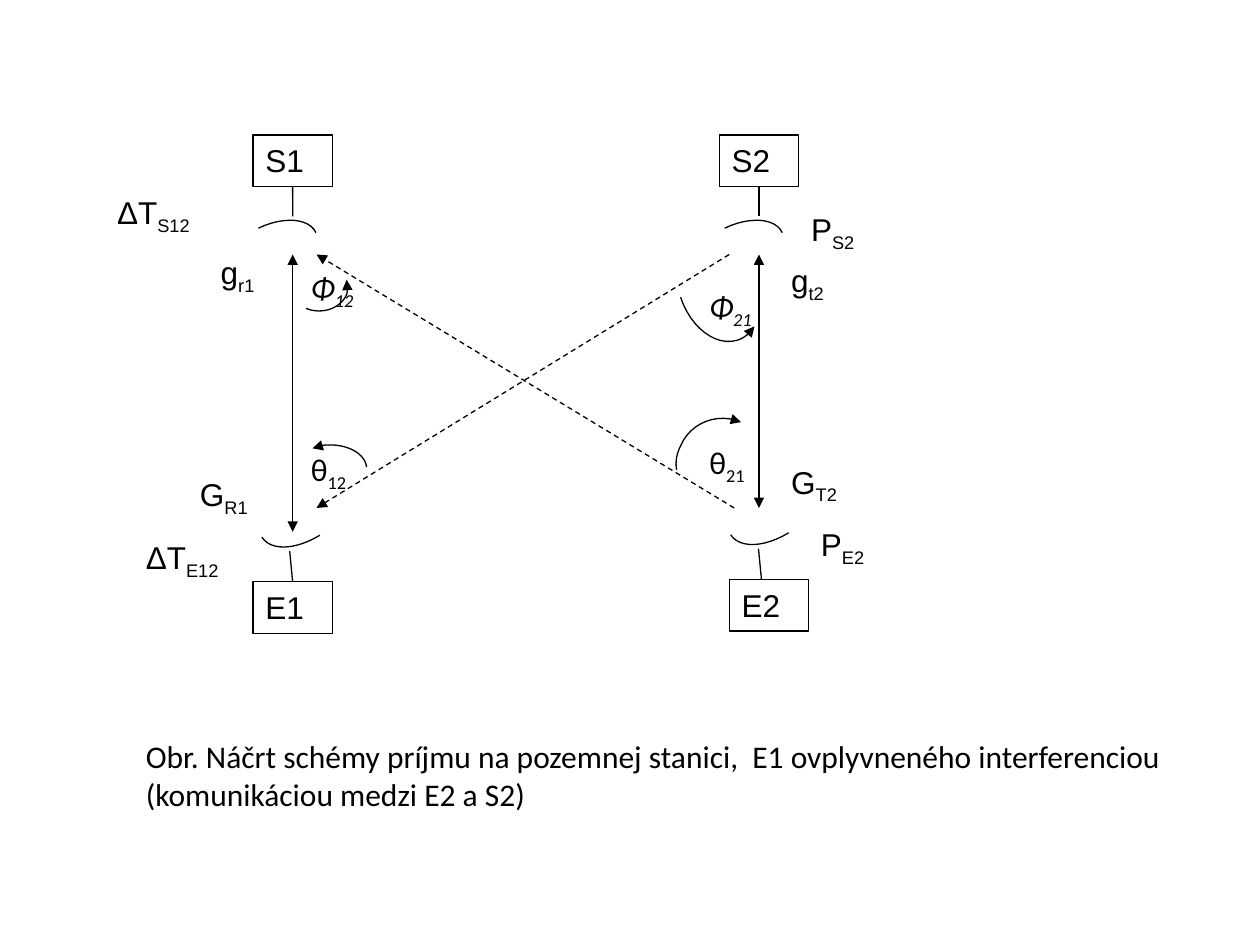
from pptx import Presentation
from pptx.dml.color import RGBColor as Rgb
from pptx.enum.dml import MSO_LINE as Dash
from pptx.enum.shapes import MSO_CONNECTOR as Wire, MSO_SHAPE as Shape
from pptx.enum.text import MSO_ANCHOR as Anchor, PP_ALIGN as Align
from pptx.oxml.ns import qn
from pptx.util import Cm, Pt
from lxml.etree import SubElement as Sub

INK = "000000"
SKY = [(.11, 1.88), (.61, 1.64), (1.13, 1.67), (1.27, 1.97)]
EARTH = [(1.35, -.94), (.86, -.64), (.36, -.62), (.18, -.9)]
BOXES = [("S1", 5.1, 2.72, True, 0), ("S2", 14.5, 2.72, True, 0),
         ("E1", 5.1, 11.73, False, 0), ("E2", 14.7, 11.68, False, -.15)]
LINKS = [((5.9, 5.13), (5.9, 10.72), True), ((15.3, 5.13), (15.3, 10.24), True),
         ((14.8, 10.24), (6.38, 5.13), False), ((14.7, 5.13), (6.38, 10.24), False)]
LABELS = [("ΔT", "S12", 2.11, 3.76), ("ΔT", "E12", 2.69, 10.72),
          ("P", "E2", 16.3, 10.46), ("P", "S2", 16.1, 4.11),
          ("g", "r1", 4.2, 4.98), ("G", "R1", 3.78, 9.45),
          ("G", "T2", 15.7, 9.2), ("g", "t2", 15.7, 5.13)]
ANGLES = [
    ("Φ", "12", 6.02, 5.28, [(.15, .94), (.48, 1.07), (.84, .94), (.97, .66),
                             (.99, .56), (.99, .46), (.97, .36)]),
    ("Φ", "21", 14.05, 5.66, [(-.33, .33), (-.13, .94), (.38, 1.33), (.81, 1.2),
                              (.96, 1.15), (1.09, 1.05), (1.16, .92)]),
    ("θ", "12", 6.02, 8.94, [(1.37, .48), (1.35, .23), (1.04, .03), (.63, .03),
                             (.51, .03), (.38, .05), (.28, .1)]),
    ("θ", "21", 14.05, 8.81, [(-.41, .66), (-.44, .51), (-.41, .33), (-.33, .18),
                              (-.13, -.3), (.43, -.5), (.89, -.3)]),
]
CAPTION = ("Obr. Náčrt schémy príjmu na pozemnej stanici,  E1 ovplyvneného "
           "interferenciou (komunikáciou medzi E2 a S2)")


def paint(part, tone):
    """Set the colour of a font or a line from a hex string."""
    part.color.rgb = Rgb.from_string(tone)


def stroke(shape, ends=(), dash=None):
    """Give a shape a thin line with optional dashes and arrowheads."""
    paint(shape.line, INK)
    shape.line.width = Pt(.75)
    if dash:
        shape.line.dash_style = dash
    for end in ends:
        Sub(shape.line._get_or_add_ln(), qn("a:" + end), type="triangle")


def style(run, face, slant=False):
    """Format one run."""
    run.font.name, run.font.size, run.font.italic = face, Pt(18), slant
    paint(run.font, INK)


def wire(slide, start, stop, ends=(), dash=None):
    """Draw a straight connector between two points."""
    line = slide.shapes.add_connector(Wire.STRAIGHT, *map(Cm, start + stop))
    stroke(line, ends, dash)
    Sub(line._element.spPr, qn("a:effectLst"))
    return line


def curve(slide, left, top, knots, ends=()):
    """Draw chained cubic curves whose knots are relative to a corner."""
    spots = []
    for at in range(0, len(knots) - 1, 3):
        for step in range(13):
            t = step / 12
            parts = ((1 - t) ** 3, 3 * t * (1 - t) ** 2, 3 * t * t * (1 - t), t ** 3)
            x, y = (sum(k * p[i] for k, p in zip(parts, knots[at:at + 4]))
                    for i in (0, 1))
            spots.append((Cm(left + x), Cm(top + y)))
    pen = slide.shapes.build_freeform(*spots[0])
    pen.add_line_segments(spots[1:], close=False)
    arc = pen.convert_to_shape()
    arc.fill.background()
    arc.shadow.inherit = False
    stroke(arc, ends)


def station(slide, name, left, top, sky, shift):
    """Place a named station box with its mast and dish."""
    box = slide.shapes.add_shape(Shape.RECTANGLE, *map(Cm, (left, top, 1.6, 1.04)))
    box.shadow.inherit = False
    box.fill.background()
    stroke(box)
    frame = box.text_frame
    frame.text = name
    frame.vertical_anchor = Anchor.TOP
    frame.paragraphs[0].alignment = Align.LEFT
    style(frame.paragraphs[0].runs[0], "Arial")
    foot = left + .8 + shift
    if sky:
        mast = wire(slide, (foot, top + 1.04), (foot, top + 1.64))
    else:
        mast = wire(slide, (foot, top), (foot - .06, top - .62))
    if not shift:
        mast.begin_connect(box, 2 if sky else 0)
    curve(slide, left + shift, top, SKY if sky else EARTH)


def label(slide, left, top, width, text, sub="", face="Arial", slant=False, high=1.02):
    """Place a text with an optional subscript."""
    frame = slide.shapes.add_textbox(*map(Cm, (left, top, width, high))).text_frame
    frame.word_wrap = True
    frame.text = text
    para = frame.paragraphs[0]
    if sub:
        low = para.add_run()
        low.text = sub
        low._r.get_or_add_rPr().set("baseline", "-25000")
    for run in para.runs:
        style(run, face, slant)


def angle(slide, sign, sub, left, top, knots):
    """Place an angle sign with its arrowed arc."""
    curve(slide, left, top, knots, ["tailEnd"])
    label(slide, left, top, 2, sign, sub, "Calibri", sign == "Φ")


def main():
    """Build and save the slide."""
    deck = Presentation()
    deck.slide_width, deck.slide_height = Cm(25.4), Cm(19.05)
    slide = deck.slides.add_slide(deck.slide_layouts[6])
    for box in BOXES:
        station(slide, *box)
    for start, stop, main_way in LINKS:
        if main_way:
            wire(slide, start, stop, ["headEnd", "tailEnd"])
        else:
            wire(slide, start, stop, ["tailEnd"], Dash.DASH)
    for text, sub, left, top in LABELS:
        label(slide, left, top, 2.21, text, sub)
    for item in ANGLES:
        angle(slide, *item)
    label(slide, 2.69, 14.73, 22.71, CAPTION, face="Calibri", high=1.8)
    deck.save("out.pptx")


if __name__ == "__main__":
    main()
